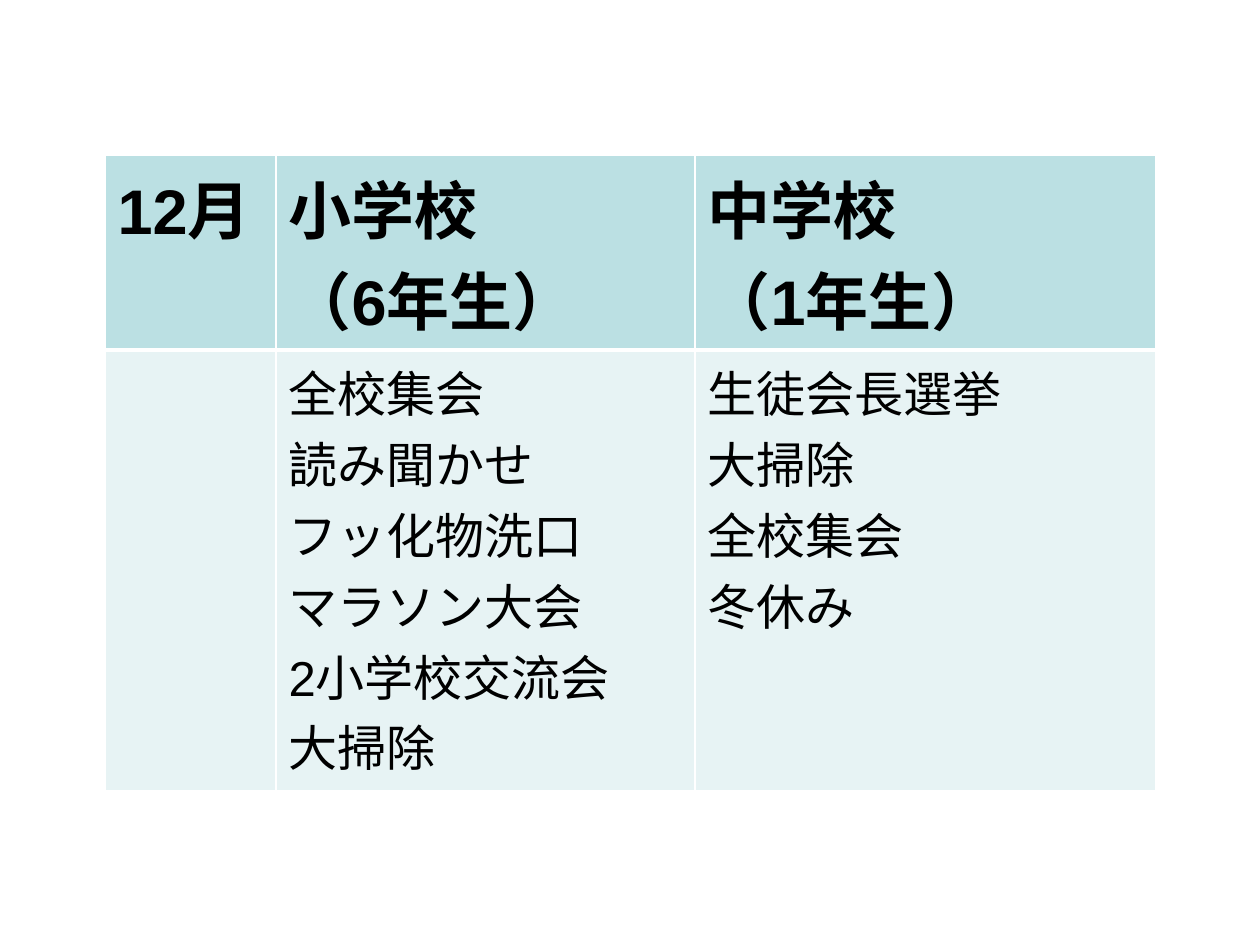
from dataclasses import dataclass

from lxml.etree import SubElement
from pptx import Presentation
from pptx.dml.color import RGBColor
from pptx.oxml.ns import qn
from pptx.slide import Slide
from pptx.util import Emu, Pt

PX = 914400 // 126
COLORS = {"header": "BBE0E3", "body": "E7F3F4", "border": "FFFFFF", "text": "000000"}
COLUMN_WIDTHS = [171, 419, 461]
ROW_HEIGHTS = [193, 441]
SCHEDULE = [
    [["12月"], ["小学校", "（6年生）"], ["中学校", "（1年生）"]],
    [
        [],
        ["全校集会", "読み聞かせ", "フッ化物洗口", "マラソン大会", "2小学校交流会", "大掃除"],
        ["生徒会長選挙", "大掃除", "全校集会", "冬休み"],
    ],
]


@dataclass
class SlideBuilder:
    """Draw styled elements on the current slide."""

    slide: Slide
    font: str = "Arial"
    header_size: int = 36
    body_size: int = 28

    def table(self, left, top, widths, heights, rows):
        frame = self.slide.shapes.add_table(
            len(rows), len(widths), Emu(left * PX), Emu(top * PX),
            Emu(sum(widths) * PX), Emu(sum(heights) * PX),
        )
        table = frame.table
        for column, width in zip(table.columns, widths):
            column.width = Emu(width * PX)
        for index, (row, height, entries) in enumerate(zip(table.rows, heights, rows)):
            row.height = Emu(height * PX)
            for cell, lines in zip(row.cells, entries):
                self.cell(cell, lines, is_header=index == 0)

    def cell(self, cell, lines, is_header):
        self.borders(cell, {"lnB" if is_header else "lnT": 3})
        cell.fill.solid()
        background = COLORS["header" if is_header else "body"]
        cell.fill.fore_color.rgb = RGBColor.from_string(background)
        cell.text_frame.text = "\n".join(lines)
        for paragraph in cell.text_frame.paragraphs:
            font = paragraph.font
            font.name = self.font
            font.size = Pt(self.header_size if is_header else self.body_size)
            font.bold = is_header
            font.color.rgb = RGBColor.from_string(COLORS["text"])

    def borders(self, cell, thick_edges):
        properties = cell._tc.get_or_add_tcPr()
        for edge in ("lnL", "lnR", "lnT", "lnB"):
            width = Pt(thick_edges.get(edge, 1))
            line = SubElement(properties, qn(f"a:{edge}"), w=str(width))
            fill = SubElement(line, qn("a:solidFill"))
            SubElement(fill, qn("a:srgbClr"), val=COLORS["border"])


def main():
    deck = Presentation()
    deck.slide_width = Emu(1260 * PX)
    deck.slide_height = Emu(945 * PX)
    builder = SlideBuilder(deck.slides.add_slide(deck.slide_layouts[6]))
    builder.table(105, 155, COLUMN_WIDTHS, ROW_HEIGHTS, SCHEDULE)
    deck.save("out.pptx")


if __name__ == "__main__":
    main()
